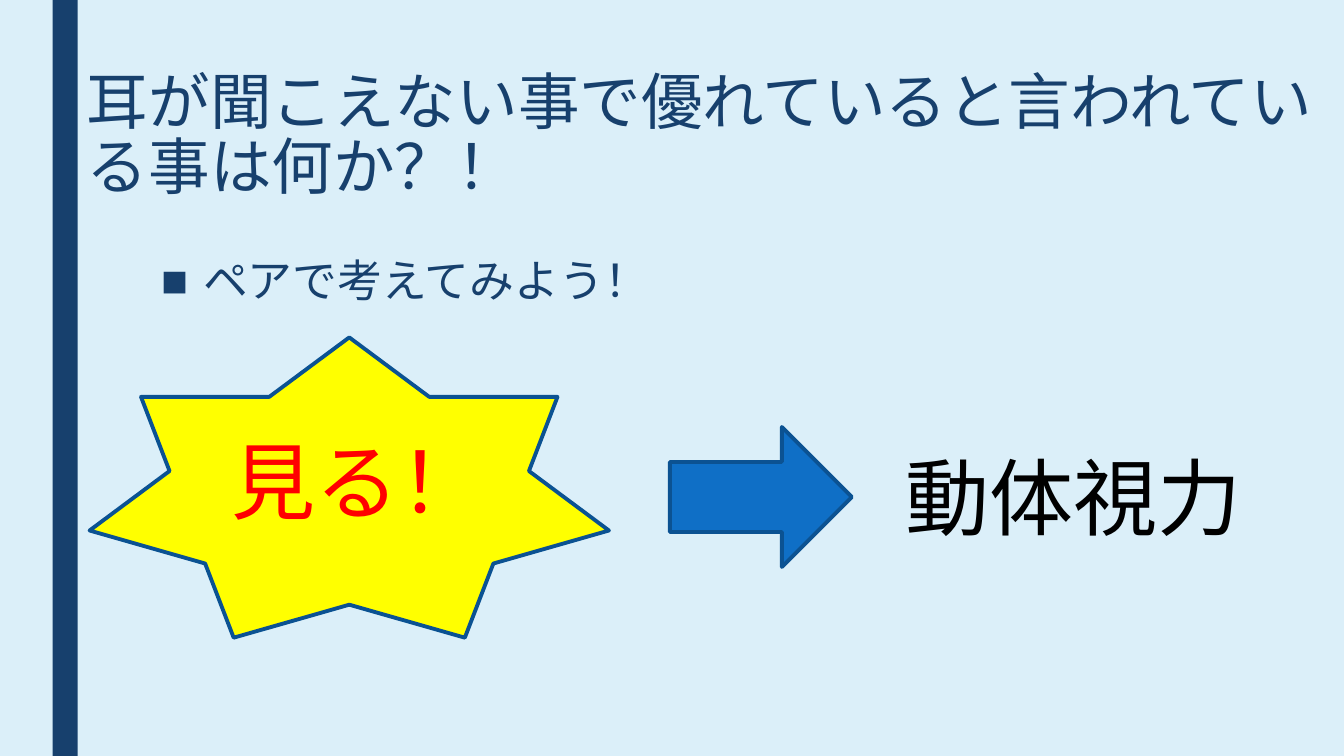
from lxml.etree import SubElement
from pptx import Presentation
from pptx.dml.color import RGBColor
from pptx.enum.shapes import MSO_SHAPE
from pptx.enum.text import MSO_ANCHOR, PP_ALIGN
from pptx.oxml.ns import qn
from pptx.util import Pt

COLORS = {
    "sky": "DBEFF9",
    "navy": "17406D",
    "blue": "0F6FC6",
    "outline": "0B5292",
    "yellow": "FFFF00",
    "red": "FF0000",
    "black": "000000",
}


class SlideBuilder:
    """Holds the style and the current slide, and draws each kind of element."""

    font = "Karla"
    line_width = 2.75

    def __init__(self, deck):
        self.page = deck.slides.add_slide(deck.slide_layouts[6])

    def color(self, name):
        return RGBColor.from_string(COLORS[name])

    def background(self, color):
        fill = self.page.background.fill
        fill.solid()
        fill.fore_color.rgb = self.color(color)

    def shape(self, kind, left, top, width, height, fill, line=None):
        shape = self.page.shapes.add_shape(
            kind, Pt(left), Pt(top), Pt(width), Pt(height))
        shape.shadow.inherit = False
        shape.fill.solid()
        shape.fill.fore_color.rgb = self.color(fill)
        if line:
            shape.line.color.rgb = self.color(line)
            shape.line.width = Pt(self.line_width)
        else:
            shape.line.fill.background()
        return shape

    def label(self, box, text, size, color, align=PP_ALIGN.LEFT, spacing=1.0):
        para = box.text_frame.paragraphs[0]
        para.alignment = align
        para.line_spacing = spacing
        span = para.add_run()
        span.text = text
        span.font.name = self.font
        span.font.size = Pt(size)
        span.font.color.rgb = self.color(color)
        return para

    def text(self, left, top, width, height, text, size, color, spacing=1.0):
        box = self.page.shapes.add_textbox(
            Pt(left), Pt(top), Pt(width), Pt(height))
        box.text_frame.word_wrap = True
        return self.label(box, text, size, color, spacing=spacing)

    def bullet(self, para, mark, indent):
        para.space_before = Pt(10)
        para.space_after = Pt(2)
        properties = para._p.get_or_add_pPr()
        properties.set("marL", str(Pt(indent)))
        properties.set("indent", str(-Pt(indent)))
        SubElement(properties, qn("a:buFont"), typeface="Arial")
        SubElement(properties, qn("a:buChar"), char=mark)


def main():
    deck = Presentation()
    deck.slide_width, deck.slide_height = Pt(960), Pt(540)
    slide = SlideBuilder(deck)
    slide.background("sky")
    slide.shape(MSO_SHAPE.RECTANGLE, 37.5, 0, 18, 540, "navy")

    slide.text(55, 47.5, 905, 116,
               "耳が聞こえない事で優れていると言われている事は何か？！",
               44, "navy", 0.89)
    prompt = slide.text(108, 180, 756, 282, "ペアで考えてみよう！",
                        32, "navy", 0.94)
    slide.bullet(prompt, "■", 30)

    star = slide.shape(MSO_SHAPE.STAR_7_POINT, 64, 241, 371, 214.5,
                       "yellow", "outline")
    star.text_frame.vertical_anchor = MSO_ANCHOR.MIDDLE
    slide.label(star, "見る！", 60, "red", PP_ALIGN.RIGHT)

    slide.text(640, 314.5, 268, 80, "動体視力", 60, "black")
    slide.shape(MSO_SHAPE.RIGHT_ARROW, 478.5, 305, 130, 100,
                "blue", "outline")
    deck.save("out.pptx")


if __name__ == "__main__":
    main()
